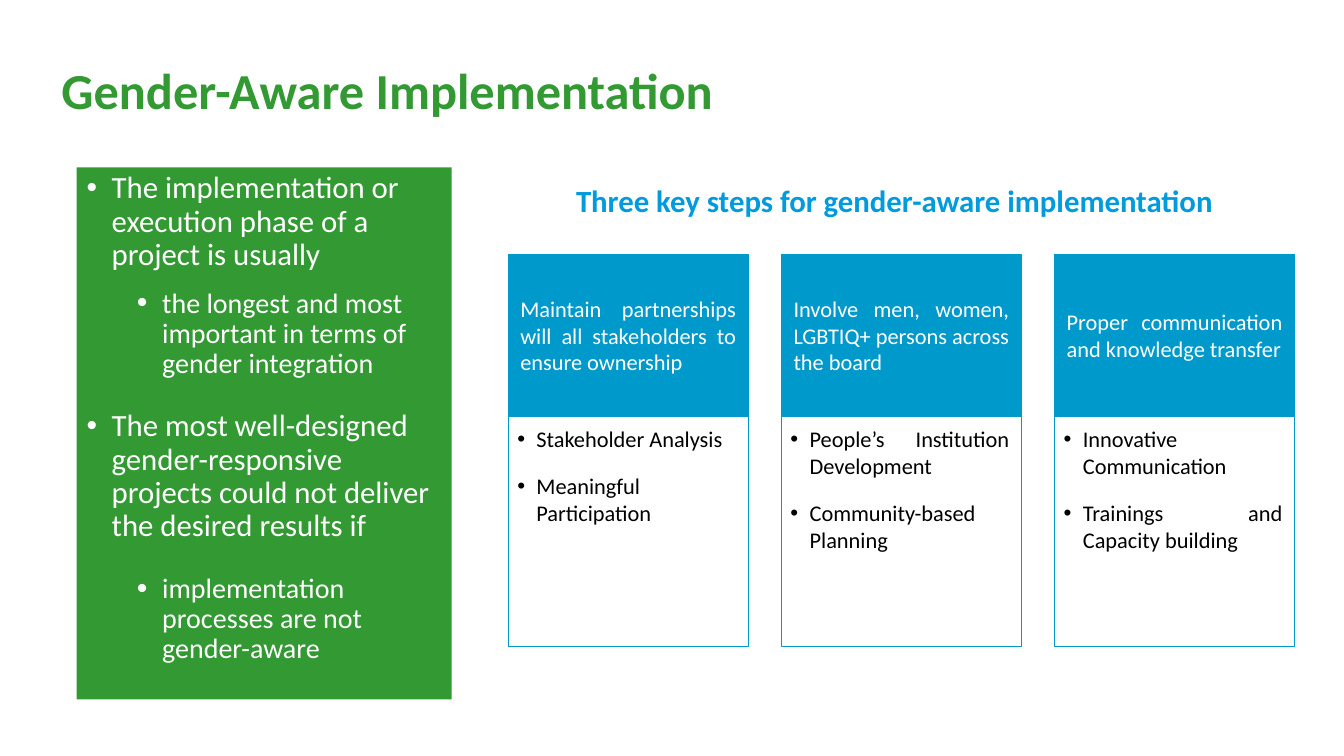
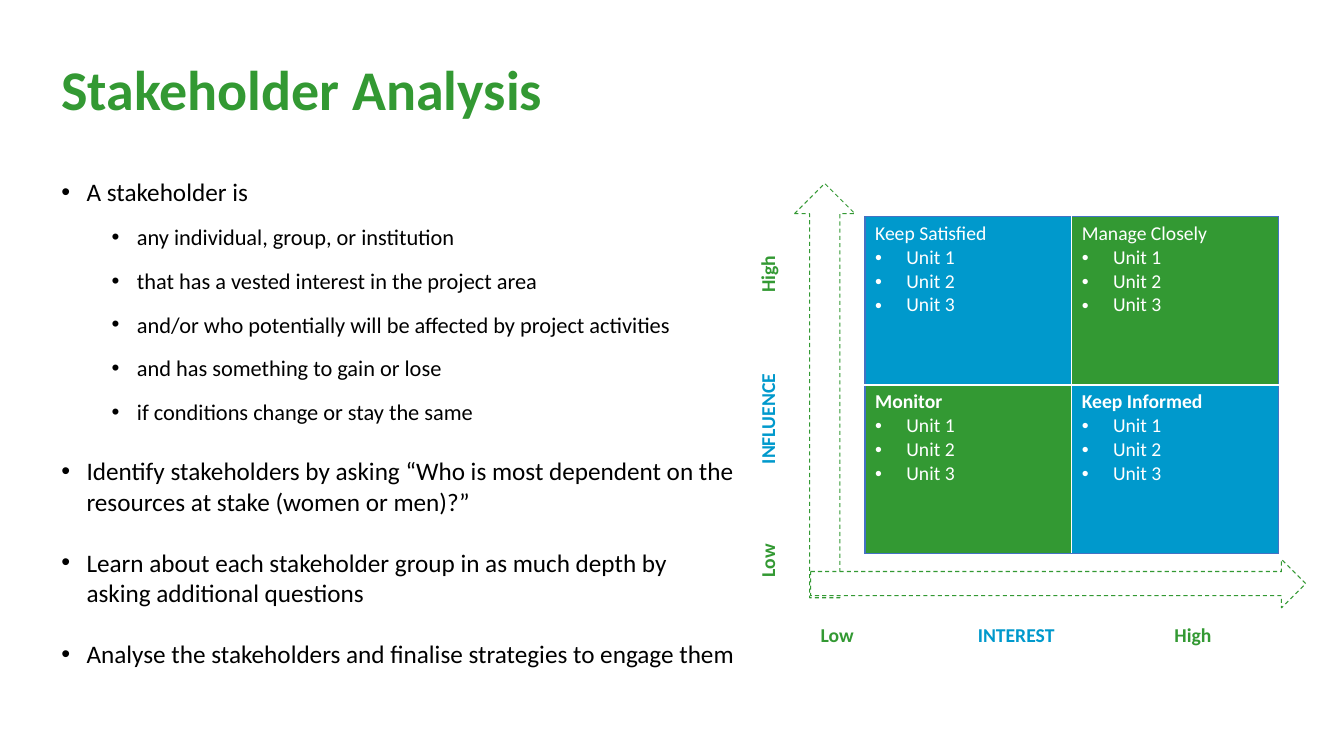
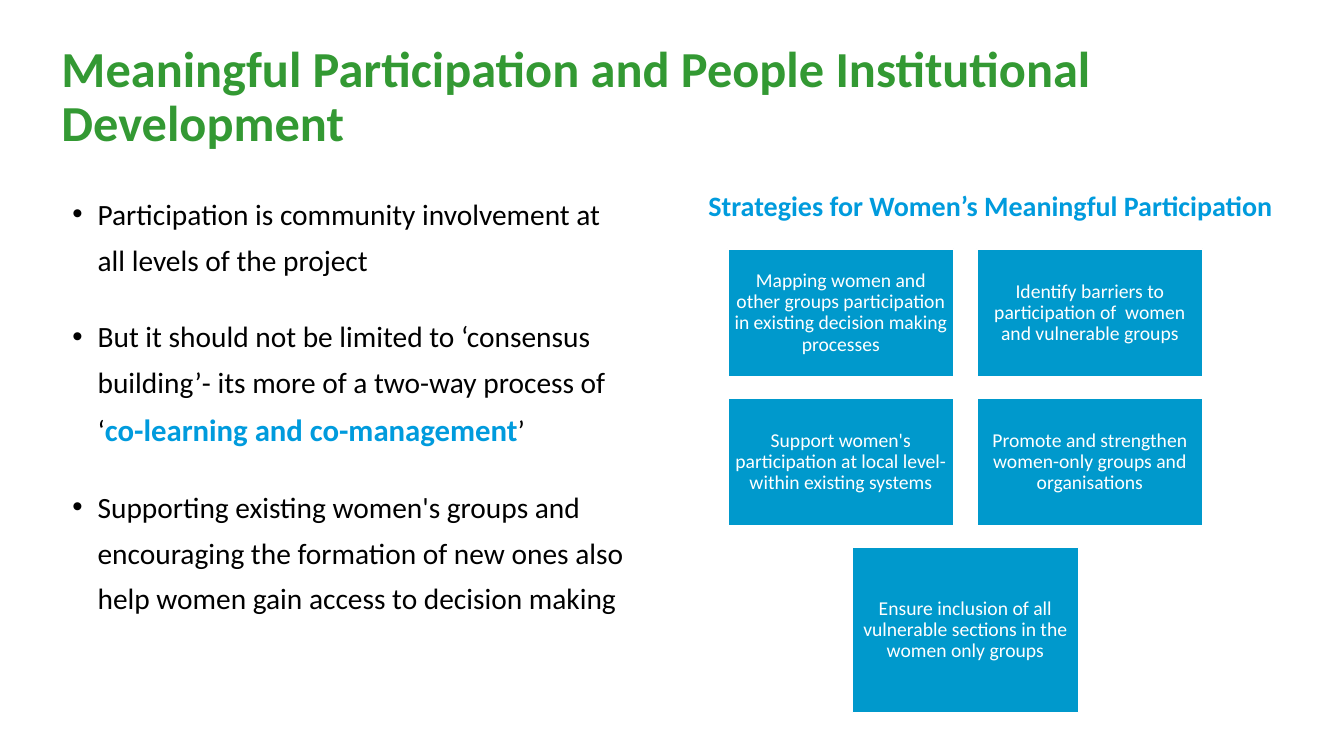
from dataclasses import dataclass

from lxml.etree import SubElement
from pptx import Presentation
from pptx.dml.color import RGBColor
from pptx.enum.dml import MSO_LINE
from pptx.enum.shapes import MSO_SHAPE
from pptx.enum.text import MSO_ANCHOR, MSO_AUTO_SIZE, PP_ALIGN
from pptx.oxml.ns import qn
from pptx.util import Inches, Pt


@dataclass(frozen=True)
class Theme:
    font: str = "Calibri"
    green: str = "339933"
    blue: str = "0099CC"
    sky: str = "009BDD"
    edge: str = "4472C4"
    white: str = "FFFFFF"
    black: str = "000000"
    title: int = 36
    large: int = 22
    mid: int = 20
    text: int = 18
    small: int = 16
    tiny: int = 14


T = Theme()


@dataclass
class Para:
    """One paragraph; every second part between bars is an accent."""
    text: str
    size: float
    color: str = T.black
    bold: bool = False
    align: PP_ALIGN = PP_ALIGN.LEFT
    level: int = 0
    lead: float = 1.0
    before: float = 0
    left: float = 0      # hanging indent: text edge
    hang: float = 0      # hanging indent: width kept for the bullet
    scale: int = 100     # bullet size in percent
    tabs: tuple = ()     # (inches, alignment) pairs
    accent: str = T.sky
    accent_size: float = 0


# Text
def add_bullet(props, item):
    props.set("marL", str(Inches(item.left)))
    props.set("indent", str(-Inches(item.hang)))
    tint = SubElement(props, qn("a:buClr"))
    SubElement(tint, qn("a:srgbClr"), val=item.color)
    SubElement(props, qn("a:buSzPct"), val=str(item.scale * 1000))
    SubElement(props, qn("a:buFont"), typeface="Arial")
    SubElement(props, qn("a:buChar"), char="•")


def add_tabs(props, stops):
    tabs = SubElement(props, qn("a:tabLst"))
    for pos, align in stops:
        SubElement(tabs, qn("a:tab"), pos=str(Inches(pos)), algn=align)


def style_run(run, size, color, bold):
    font = run.font
    font.name, font.size, font.bold = T.font, Pt(size), bold
    font.color.rgb = RGBColor.from_string(color)


def fill_para(para, item):
    para.alignment, para.level = item.align, item.level
    para.line_spacing, para.space_before = item.lead, Pt(item.before)
    props = para._p.get_or_add_pPr()
    if item.hang:
        add_bullet(props, item)
    if item.tabs:
        add_tabs(props, item.tabs)
    for i, part in enumerate(item.text.split("|")):
        run = para.add_run()
        run.text = part
        if i % 2:
            style_run(run, item.accent_size or item.size, item.accent, True)
        else:
            style_run(run, item.size, item.color, item.bold)


def write(frame, items, anchor=MSO_ANCHOR.TOP, pad=(0.1, 0.05, 0.1, 0.05)):
    frame.word_wrap, frame.auto_size = True, MSO_AUTO_SIZE.NONE
    frame.vertical_anchor = anchor
    (frame.margin_left, frame.margin_top,
     frame.margin_right, frame.margin_bottom) = map(Inches, pad)
    for i, item in enumerate(items):
        fill_para(frame.add_paragraph() if i else frame.paragraphs[0], item)


def add_text(slide, box, items):
    shape = slide.shapes.add_textbox(*map(Inches, box))
    write(shape.text_frame, items)
    return shape


# Shapes
def add_box(slide, box, fill, line=None, kind=MSO_SHAPE.RECTANGLE, width=0.75):
    shape = slide.shapes.add_shape(kind, *map(Inches, box))
    shape.shadow.inherit = False
    shape.fill.solid()
    shape.fill.fore_color.rgb = RGBColor.from_string(fill)
    if line:
        shape.line.color.rgb = RGBColor.from_string(line)
        shape.line.width = Pt(width)
    else:
        shape.line.fill.background()
    return shape


def new_slide(deck, text, box, size=T.title):
    slide = deck.slides.add_slide(deck.slide_layouts[5])
    title = slide.shapes.title
    title.left, title.top, title.width, title.height = map(Inches, box)
    write(title.text_frame, [Para(text, size, T.green, True, lead=0.9)],
          MSO_ANCHOR.MIDDLE)
    return slide


def add_head(slide, box, text, size):
    add_text(slide, box, [Para(text, size, T.sky, True, PP_ALIGN.CENTER,
                               lead=0.8)])


def point(text, size, level=0, **more):
    return Para(text, size, level=level, left=0.25 + 0.5 * level, hang=0.25,
                **more)


# Slide 1: green panel and three cards
def add_panel(slide, box):
    main = dict(size=T.large, color=T.white, lead=0.9, scale=98)
    sub = dict(size=T.mid, color=T.white, lead=0.9, scale=108, level=1)
    write(add_box(slide, box, T.green).text_frame, [
        point("The implementation or execution phase of a project is usually",
              **main),
        point("the longest and most important in terms of gender integration",
              before=12, **sub),
        point("The most well-designed gender-responsive projects could not "
              "deliver the desired results if", before=22, **main),
        point("implementation processes are not gender-aware",
              before=22, **sub),
    ])


def add_card(slide, box, step, points):
    left, top, width, height = box
    cap = 1.61
    head = add_box(slide, (left, top, width, cap), T.blue, T.blue)
    write(head.text_frame,
          [Para(step, T.small, T.white, align=PP_ALIGN.JUSTIFY)],
          MSO_ANCHOR.MIDDLE, (0.12, 0.07, 0.12, 0.07))
    body = add_box(slide, (left, top + cap, width, height - cap), T.white,
                   T.blue)
    write(body.text_frame,
          [Para(text, T.small, align=PP_ALIGN.JUSTIFY, level=1, left=0.19,
                hang=0.19, before=14.4 if i else 0)
           for i, text in enumerate(points)],
          pad=(0.09, 0.09, 0.12, 0.14))


def build_steps(deck):
    slide = new_slide(deck, "Gender-Aware Implementation",
                      (0.51, 0.56, 8.15, 0.73))
    add_panel(slide, (0.76, 1.66, 3.72, 5.28))
    add_head(slide, (4.91, 1.82, 7.92, 0.4),
             "Three key steps for gender-aware implementation", T.large)
    cards = [
        ("Maintain partnerships will all stakeholders to ensure ownership",
         ["Stakeholder Analysis", "Meaningful Participation"]),
        ("Involve men, women, LGBTIQ+ persons across the board",
         ["People’s Institution Development", "Community-based Planning"]),
        ("Proper communication and knowledge transfer",
         ["Innovative Communication", "Trainings and Capacity building"]),
    ]
    for i, (step, points) in enumerate(cards):
        add_card(slide, (5.04 + 2.71 * i, 2.52, 2.38, 3.89), step, points)


# Slide 2: points beside an influence and interest grid
def add_edge(cell, side):
    props = cell._tc.get_or_add_tcPr()
    line = SubElement(props, qn(f"a:ln{side}"), w=str(Pt(1)))
    fill = SubElement(line, qn("a:solidFill"))
    SubElement(fill, qn("a:srgbClr"), val=T.edge)


def add_grid(slide, box):
    table = slide.shapes.add_table(2, 2, *map(Inches, box)).table
    table.first_row = table.horz_banding = False
    names = [["Keep Satisfied", "Manage Closely"],
             ["Monitor", "Keep Informed"]]
    for r, row in enumerate(names):
        table.rows[r].height = Inches(box[3] / 2)
        for c, name in enumerate(row):
            cell = table.cell(r, c)
            units = [Para(f"Unit {n}", T.tiny, T.white, left=0.31, hang=0.31)
                     for n in (1, 2, 3)]
            head = Para(name, T.tiny, T.white, bold=r == 1)
            for i, item in enumerate([head, *units]):
                frame = cell.text_frame
                fill_para(frame.add_paragraph() if i else frame.paragraphs[0],
                          item)
            # Only the outer edges of the grid are ruled
            for side in ("R" if c else "L", "B" if r else "T"):
                add_edge(cell, side)
            cell.fill.solid()
            cell.fill.fore_color.rgb = RGBColor.from_string(
                T.blue if r == c == 0 or r == c == 1 else T.green)


def add_axis(slide, kind, arrow, label, name, mid, end, turn=0):
    shape = add_box(slide, arrow, T.white, T.green, kind)
    shape.line.dash_style = MSO_LINE.DASH
    text = add_text(slide, label, [
        Para(f"Low|\t{name}|\tHigh", T.tiny, T.green, True, accent=T.blue,
             tabs=((mid, "ctr"), (end, "l")))])
    text.rotation = turn


def build_grid(deck):
    slide = new_slide(deck, "Stakeholder Analysis", (0.51, 0.53, 8.15, 0.77),
                      40)
    subs = ["any individual, group, or institution",
            "that has a vested interest in the project area",
            "and/or who potentially will be affected by project activities",
            "and has something to gain or lose",
            "if conditions change or stay the same"]
    mains = ["Identify stakeholders by asking “Who is most dependent on the "
             "resources at stake (women or men)?”",
             "Learn about each stakeholder group in as much depth by asking "
             "additional questions",
             "Analyse the stakeholders and finalise strategies to engage them"]
    add_text(slide, (0.51, 1.7, 6.88, 5.28), [
        point("A stakeholder is", T.text),
        *[point(text, T.small, 1, before=12) for text in subs],
        *[point(text, T.text, before=22) for text in mains],
    ])
    add_grid(slide, (8.58, 2.15, 4.1, 3.34))
    add_axis(slide, MSO_SHAPE.UP_ARROW, (7.88, 1.82, 0.6, 4.11),
             (5.48, 3.52, 4.27, 0.34), "INFLUENCE", 1.57, 2.82, 270)
    add_axis(slide, MSO_SHAPE.RIGHT_ARROW, (8.04, 5.55, 4.91, 0.48),
             (8.04, 6.13, 4.91, 0.57), "INTEREST", 1.94, 3.51)


# Slide 3: points beside a block of strategies
def add_tiles(slide, box, texts):
    left, top, width, height = box
    gap_x, gap_y, wide, tall = 0.23, 0.21, (width - 0.23) / 2, 1.27
    for i, text in enumerate(texts):
        row, col = divmod(i, 2)
        last = i == len(texts) - 1
        x = left + (wide + gap_x) * (0.5 if last else col)
        y = top + (tall + gap_y) * row
        size = top + height - y if last else tall
        tile = add_box(slide, (x, y, wide, size), T.blue, T.white, width=1)
        write(tile.text_frame,
              [Para(text, T.tiny, T.white, align=PP_ALIGN.CENTER, lead=0.9)],
              MSO_ANCHOR.MIDDLE, (0.06,) * 4)


def build_tiles(deck):
    slide = new_slide(
        deck, "Meaningful Participation and People Institutional Development",
        (0.51, 0.65, 12.56, 0.65))
    points = [
        "Participation is community involvement at all levels of the project",
        "But it should not be limited to ‘consensus building’- its more of a "
        "two-way process of ‘|co-learning and co-management|’",
        "Supporting existing women's groups and encouraging the formation of "
        "new ones also help women gain access to decision making",
    ]
    add_text(slide, (0.62, 1.79, 5.77, 5.28),
             [point(text, 21, lead=1.3, before=22 if i else 0,
                    accent_size=T.large) for i, text in enumerate(points)])
    add_head(slide, (6.32, 1.89, 7.01, 0.37),
             "Strategies for Women’s Meaningful Participation", T.mid)
    add_tiles(slide, (7.22, 2.47, 4.71, 4.6), [
        "Mapping women and other groups participation in existing decision "
        "making processes",
        "Identify barriers to participation of  women and vulnerable groups",
        "Support women's participation at local level- within existing systems",
        "Promote and strengthen women-only groups and organisations",
        "Ensure inclusion of all vulnerable sections in the women only groups",
    ])


def main():
    deck = Presentation()
    deck.slide_width, deck.slide_height = Inches(13.33), Inches(7.5)
    for build in (build_steps, build_grid, build_tiles):
        build(deck)
    deck.save("out.pptx")


if __name__ == "__main__":
    main()
